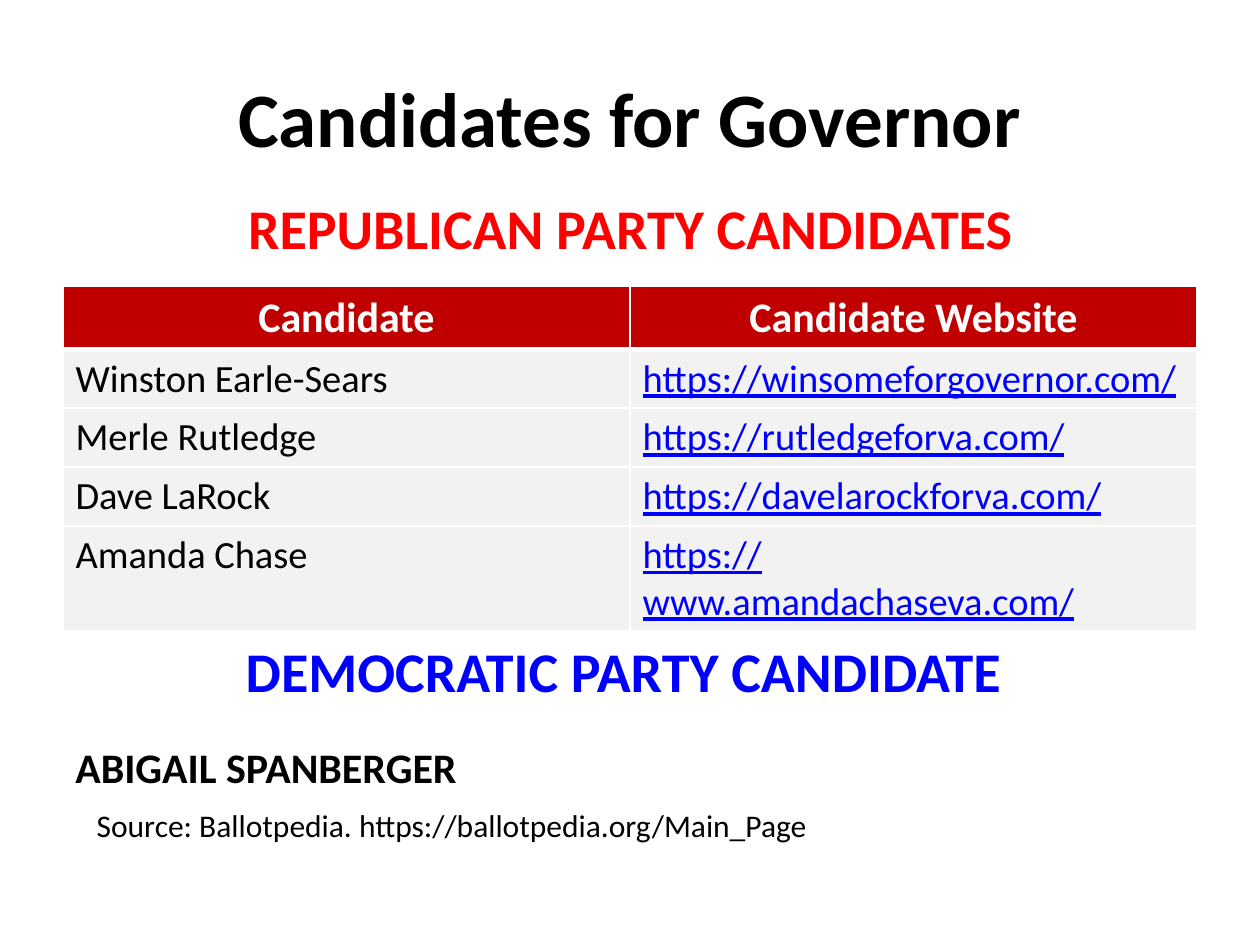
from dataclasses import dataclass

from lxml.etree import SubElement
from pptx import Presentation
from pptx.dml.color import RGBColor
from pptx.enum.text import MSO_ANCHOR, PP_ALIGN
from pptx.oxml.ns import qn
from pptx.util import Cm, Pt


@dataclass(frozen=True)
class Theme:
    font: str = "Calibri"
    black: str = "000000"
    white: str = "FFFFFF"
    red: str = "FF0000"
    blue: str = "0000FF"
    header_fill: str = "C00000"
    row_fill: str = "F2F2F2"
    title_size: int = 44
    heading_size: int = 32
    header_size: int = 24
    cell_size: int = 22
    source_size: int = 18
    border: int = 1
    header_border: int = 3


THEME = Theme()

CANDIDATES = [
    ("Winston Earle-Sears", "https://winsomeforgovernor.com/"),
    ("Merle Rutledge", "https://rutledgeforva.com/"),
    ("Dave LaRock", "https://davelarockforva.com/"),
    ("Amanda Chase", "https://www.amandachaseva.com/"),
]


def write(para, text, size, color=THEME.black, bold=False, underline=False,
          align=PP_ALIGN.LEFT, before=0):
    para.alignment = align
    if before:
        para.space_before = Pt(before)
    span = para.add_run()
    span.text = text
    span.font.name = THEME.font
    span.font.size = Pt(size)
    span.font.bold = bold
    span.font.underline = underline
    span.font.color.rgb = RGBColor.from_string(color)


def add_box(page, left, top, width, height, anchor=MSO_ANCHOR.TOP):
    box = page.shapes.add_textbox(Cm(left), Cm(top), Cm(width), Cm(height))
    frame = box.text_frame
    frame.word_wrap = True
    frame.vertical_anchor = anchor
    return frame


def set_borders(cell, bottom):
    properties = cell._tc.get_or_add_tcPr()
    sides = {"L": THEME.border, "R": THEME.border, "T": THEME.border, "B": bottom}
    for side, width in sides.items():
        line = SubElement(properties, qn(f"a:ln{side}"), w=str(Pt(width)))
        fill = SubElement(line, qn("a:solidFill"))
        SubElement(fill, qn("a:srgbClr"), val=THEME.white)


def fill_cell(cell, text, fill, bottom=THEME.border, **text_format):
    set_borders(cell, bottom)
    cell.fill.solid()
    cell.fill.fore_color.rgb = RGBColor.from_string(fill)
    write(cell.text_frame.paragraphs[0], text, **text_format)


def add_candidate_table(page):
    row_height = 1.04
    row_count = len(CANDIDATES) + 1
    table = page.shapes.add_table(row_count, 2, Cm(1.27), Cm(5.77),
                                  Cm(22.86), Cm(row_height * row_count)).table
    for cell, text in zip(table.rows[0].cells, ("Candidate", "Candidate Website")):
        fill_cell(cell, text, THEME.header_fill, THEME.header_border,
                  size=THEME.header_size, color=THEME.white, bold=True,
                  align=PP_ALIGN.CENTER)
    for index, (name, website) in enumerate(CANDIDATES, start=1):
        fill_cell(table.cell(index, 0), name, THEME.row_fill, size=THEME.cell_size,
                  bottom=THEME.header_border if index == 0 else THEME.border)
        fill_cell(table.cell(index, 1), website, THEME.row_fill,
                  size=THEME.cell_size, color=THEME.blue, underline=True)
    top_cells = table.rows[1].cells
    for cell in top_cells:
        cell._tc.tcPr.find(qn("a:lnT")).set("w", str(Pt(THEME.header_border)))


def main():
    deck = Presentation()
    deck.slide_width, deck.slide_height = Cm(25.4), Cm(19.05)
    page = deck.slides.add_slide(deck.slide_layouts[6])

    title = add_box(page, 1.27, 0.76, 22.86, 3.18, MSO_ANCHOR.MIDDLE)
    write(title.paragraphs[0], "Candidates for Governor", THEME.title_size,
          bold=True, align=PP_ALIGN.CENTER)

    add_candidate_table(page)

    democratic = add_box(page, 1.27, 12.7, 22.86, 4.19)
    write(democratic.paragraphs[0], "DEMOCRATIC PARTY CANDIDATE ",
          THEME.heading_size, color=THEME.blue, bold=True, align=PP_ALIGN.CENTER)
    write(democratic.add_paragraph(), "ABIGAIL SPANBERGER", THEME.header_size,
          bold=True, before=22)

    source = add_box(page, 1.7, 16.13, 19.51, 1.02)
    write(source.paragraphs[0],
          "Source: Ballotpedia. https://ballotpedia.org/Main_Page", THEME.source_size)

    republican = add_box(page, 3.5, 3.78, 18.42, 1.63)
    write(republican.paragraphs[0], "REPUBLICAN PARTY CANDIDATES",
          THEME.heading_size, color=THEME.red, bold=True, align=PP_ALIGN.CENTER)

    deck.save("out.pptx")


if __name__ == "__main__":
    main()
